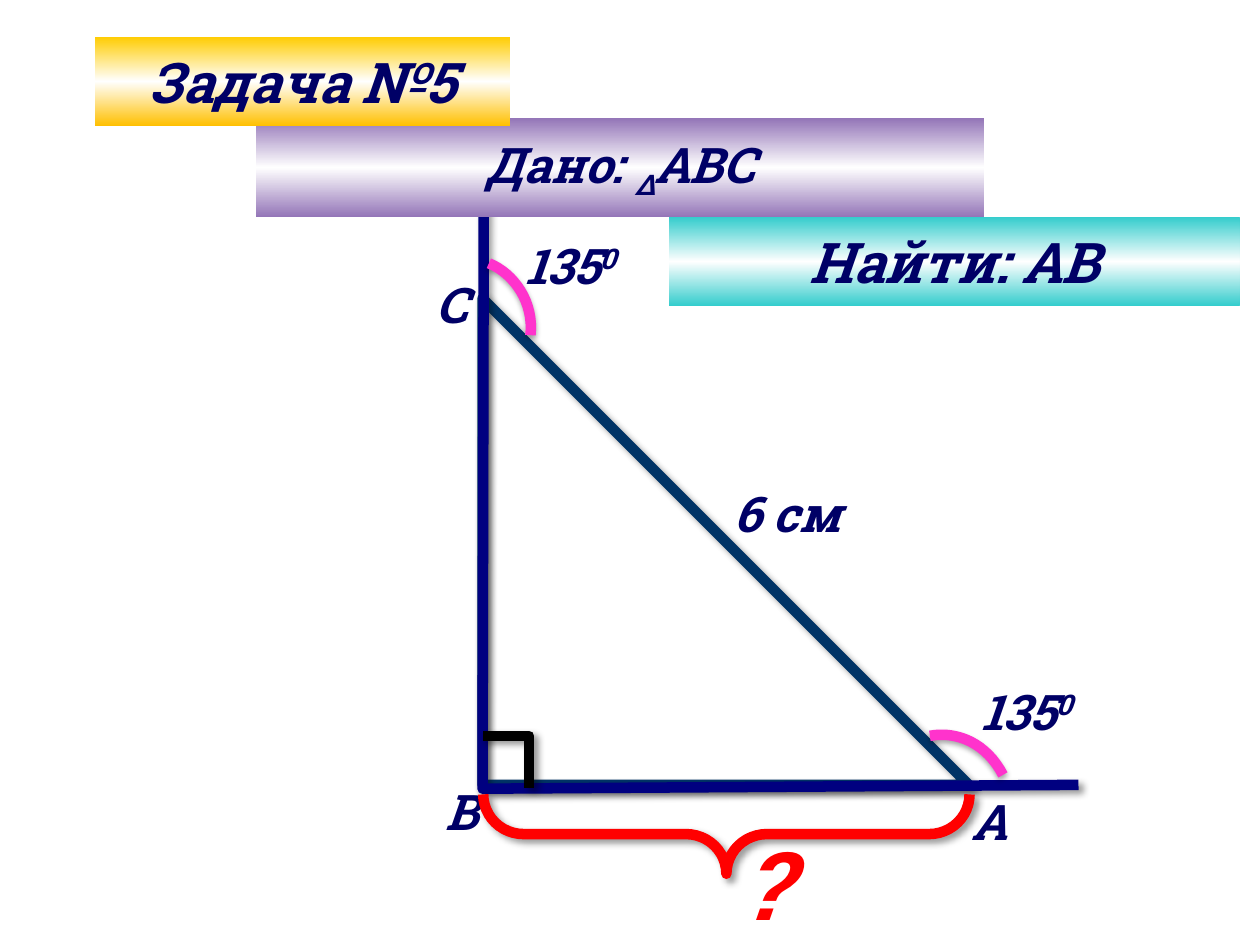
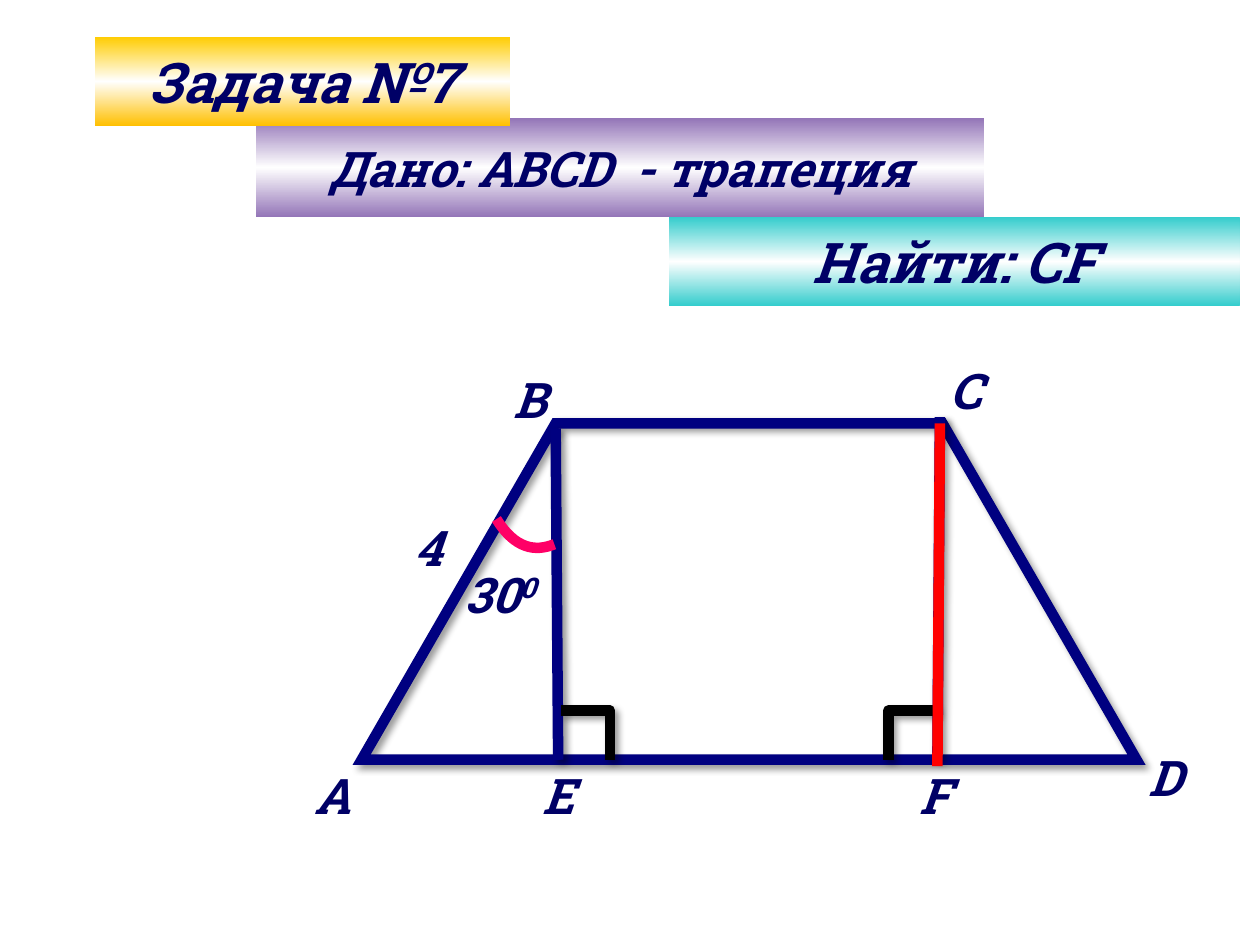
from copy import deepcopy
from dataclasses import dataclass

from lxml.etree import SubElement
from pptx import Presentation
from pptx.dml.color import RGBColor
from pptx.enum.shapes import MSO_CONNECTOR as Connector, MSO_SHAPE as Shape
from pptx.enum.text import MSO_ANCHOR as Anchor, MSO_AUTO_SIZE as AutoSize, PP_ALIGN as Align
from pptx.oxml.ns import qn
from pptx.util import Inches, Pt

# The slide is a grid of 10 columns by 7.5 rows of square cells.
CELL = Inches(1)
COLUMNS, ROWS = 10, 7.5
TITLE_ONLY = 5


@dataclass(frozen=True)
class Theme:
    font: str = "Roboto Slab"
    text: str = "000066"
    side: str = "000080"
    hypotenuse: str = "003366"
    right_angle: str = "000000"
    outer_angle: str = "FF33CC"
    acute_angle: str = "FF0066"
    unknown: str = "FF0000"
    title_band: tuple = ("FFCC00", "FFFFFF", "FFC000")
    given_band: tuple = ("9476B8", "FFFFFF", "9476B8")
    find_band: tuple = ("33CCCC", "FFFFFF", "33CCCC")
    heading_size: int = 32
    label_size: int = 28
    question_size: int = 54
    line_width: int = 6


THEME = Theme()
# Opacity %, blur pt, distance pt, direction in degrees
SIDE_SHADOW = (40, 4, 3, 45)
ARC_SHADOW = (35, 3.1, 1.8, 90)


def cells(*values):
    return [round(value * CELL) for value in values]


def write(shape, runs, size, color=THEME.text, align=Align.LEFT):
    """Fill a shape with one paragraph; a run is a text or a (text, baseline %) pair."""
    frame = shape.text_frame
    frame.word_wrap = False
    paragraph = frame.paragraphs[0]
    paragraph.alignment = align
    font = paragraph.font
    font.name, font.size = THEME.font, Pt(size)
    font.bold = font.italic = True
    font.color.rgb = RGBColor.from_string(color)
    for item in runs:
        text, baseline = (item, 0) if isinstance(item, str) else item
        run = paragraph.add_run()
        run.text = text
        if baseline:
            run.font._element.set("baseline", str(baseline * 1000))


def add_label(slide, left, top, width, *runs, size=THEME.label_size, color=THEME.text):
    box = slide.shapes.add_textbox(*cells(left, top, width, size / 50))
    write(box, runs, size, color)


def add_degrees(slide, left, top, width, number):
    add_label(slide, left, top, width, number, ("0", 30))


def fill_gradient(shape, colors):
    """Blend the three colours from top to bottom."""
    fill = shape.fill
    fill.gradient()
    fill.gradient_angle = 270
    stop_list = shape._element.spPr.find(".//" + qn("a:gsLst"))
    stop_list.append(deepcopy(stop_list[0]))
    for stop, color, position in zip(fill.gradient_stops, colors, (0, 0.5, 1)):
        stop.color.rgb = RGBColor.from_string(color)
        stop.position = position


def format_band(shape, colors, runs, size):
    fill_gradient(shape, colors)
    shape.text_frame.vertical_anchor = Anchor.MIDDLE
    write(shape, runs, size, align=Align.CENTER)


def add_band(slide, box, colors, runs, size):
    band = slide.shapes.add_shape(Shape.RECTANGLE, *cells(*box))
    band.shadow.inherit = False
    band.line.fill.background()
    format_band(band, colors, runs, size)


def place_title(slide, text):
    """Turn the title placeholder into a rounded band in front of the others."""
    title = slide.shapes.title
    title.left, title.top, title.width, title.height = cells(0.75, 0.29, 3.3, 0.71)
    geometry = SubElement(title._element.spPr, qn("a:prstGeom"), prst="roundRect")
    guides = SubElement(geometry, qn("a:avLst"))
    SubElement(guides, qn("a:gd"), name="adj", fmla="val 25400")
    title.text_frame.auto_size = AutoSize.NONE
    format_band(title, THEME.title_band, [text], THEME.heading_size)
    slide.shapes._spTree.append(title._element)


def add_headings(slide, title, given, find):
    add_band(slide, (5.31, 1.72, 4.53, 0.71), THEME.find_band, [find], THEME.heading_size)
    add_band(slide, (2.03, 0.94, 5.78, 0.78), THEME.given_band, given, THEME.label_size)
    place_title(slide, title)


def draw_outline(shape, color, shadow=SIDE_SHADOW, sharp=False):
    """Set the thick line, its corners and its shadow."""
    shape.line.color.rgb = RGBColor.from_string(color)
    shape.line.width = Pt(THEME.line_width)
    properties = shape._element.spPr
    if sharp:
        SubElement(properties.find(qn("a:ln")), qn("a:miter"), lim="800000")
    effects = SubElement(properties, qn("a:effectLst"))
    if shadow:
        opacity, blur, distance, direction = shadow
        outer = SubElement(
            effects, qn("a:outerShdw"), blurRad=str(Pt(blur)), dist=str(Pt(distance)),
            dir=str(direction * 60000), algn="tl", rotWithShape="0")
        black = SubElement(outer, qn("a:srgbClr"), val="000000")
        SubElement(black, qn("a:alpha"), val=str(opacity * 1000))


def add_path(slide, points, color, close=False, **outline):
    start, *others = [cells(*point) for point in points]
    builder = slide.shapes.build_freeform(*start)
    builder.add_line_segments(others, close=close)
    shape = builder.convert_to_shape()
    shape.fill.background()
    draw_outline(shape, color, **outline)


def add_segment(slide, start, end, color, **outline):
    line = slide.shapes.add_connector(Connector.STRAIGHT, *cells(*start, *end))
    draw_outline(line, color, **outline)


def add_preset(slide, preset, box, color):
    shape = slide.shapes.add_shape(preset, *cells(*box))
    shape.fill.background()
    draw_outline(shape, color)
    return shape


def add_right_angle(slide, corner, width, height):
    """Mark a right angle; a negative width opens to the left."""
    x, y = corner
    points = [(x + width, y), (x + width, y - height), (x, y - height)]
    add_path(slide, points, THEME.right_angle)


def add_angle_arc(slide, controls, color, shadow=None, steps=16):
    """Draw a cubic curve through its four control points."""
    points = []
    for step in range(steps + 1):
        t = step / steps
        weights = ((1 - t) ** 3, 3 * t * (1 - t) ** 2, 3 * t * t * (1 - t), t ** 3)
        points.append([sum(w * value for w, value in zip(weights, axis))
                       for axis in zip(*controls)])
    add_path(slide, points, color, shadow=shadow)


def draw_triangle_task(slide):
    add_label(slide, 7.61, 6.23, 0.5, "А")
    add_label(slide, 3.44, 6.15, 0.5, "B")
    add_label(slide, 3.36, 2.13, 0.49, "C")
    add_preset(slide, Shape.RIGHT_TRIANGLE, (3.83, 2.37, 3.86, 3.86), THEME.hypotenuse)
    add_path(slide, [(8.56, 6.23), (3.83, 6.26), (3.84, 1.56)], THEME.side)
    add_right_angle(slide, (3.83, 6.25), 0.37, 0.41)
    for controls in (
        [(3.88, 2.09), (4.08, 2.17), (4.24, 2.4), (4.21, 2.66)],
        [(7.38, 5.84), (7.6, 5.8), (7.83, 5.9), (7.96, 6.15)],
    ):
        add_angle_arc(slide, controls, THEME.outer_angle, ARC_SHADOW)
    add_degrees(slide, 4.07, 1.82, 1.18, "135")
    add_degrees(slide, 7.69, 5.36, 1.18, "135")
    add_label(slide, 5.72, 3.79, 1.16, "6 см")
    brace = add_preset(slide, Shape.RIGHT_BRACE, (5.45, 4.69, 0.63, 3.86), THEME.unknown)
    brace.adjustments[0] = 0.51
    brace.rotation = 90
    add_label(slide, 5.79, 6.51, 0.67, "?", size=THEME.question_size, color=THEME.unknown)
    add_headings(slide, "Задача №5", ["Дано: ", ("Δ", -25), "АВС"], "Найти: АВ")


def draw_trapezoid_task(slide):
    a, b, c, d = (2.87, 6.03), (4.41, 3.36), (7.48, 3.36), (9.02, 6.03)
    add_path(slide, [a, b, c, d], THEME.side, close=True, sharp=True)
    add_segment(slide, (4.41, 3.4), (4.43, 6.03), THEME.side)
    add_right_angle(slide, (4.45, 6.03), 0.39, 0.39)
    add_segment(slide, (7.46, 3.31), (7.44, 6.03), THEME.side)
    add_right_angle(slide, (7.44, 6.03), -0.39, 0.39)
    for name, left, top in (
        ("А", 2.4, 6.03), ("B", 3.98, 2.88), ("C", 7.44, 2.81),
        ("D", 9.02, 5.88), ("E", 4.21, 6.03), ("F", 7.2, 6.03), ("4", 3.19, 4.06),
    ):
        add_label(slide, left, top, 0.48, name)
    add_degrees(slide, 3.59, 4.43, 0.91, "30")
    acute = [(4.4, 4.32), (4.25, 4.38), (4.09, 4.36), (3.94, 4.12)]
    add_angle_arc(slide, acute, THEME.acute_angle)
    add_segment(slide, (7.46, 3.36), (7.44, 6.08), THEME.unknown, shadow=None)
    add_headings(slide, "Задача №7", ["Дано: АВСD  - трапеция"], "Найти: СF")


def main():
    presentation = Presentation()
    presentation.slide_width, presentation.slide_height = cells(COLUMNS, ROWS)
    for draw in (draw_triangle_task, draw_trapezoid_task):
        draw(presentation.slides.add_slide(presentation.slide_layouts[TITLE_ONLY]))
    presentation.save("out.pptx")


if __name__ == "__main__":
    main()
